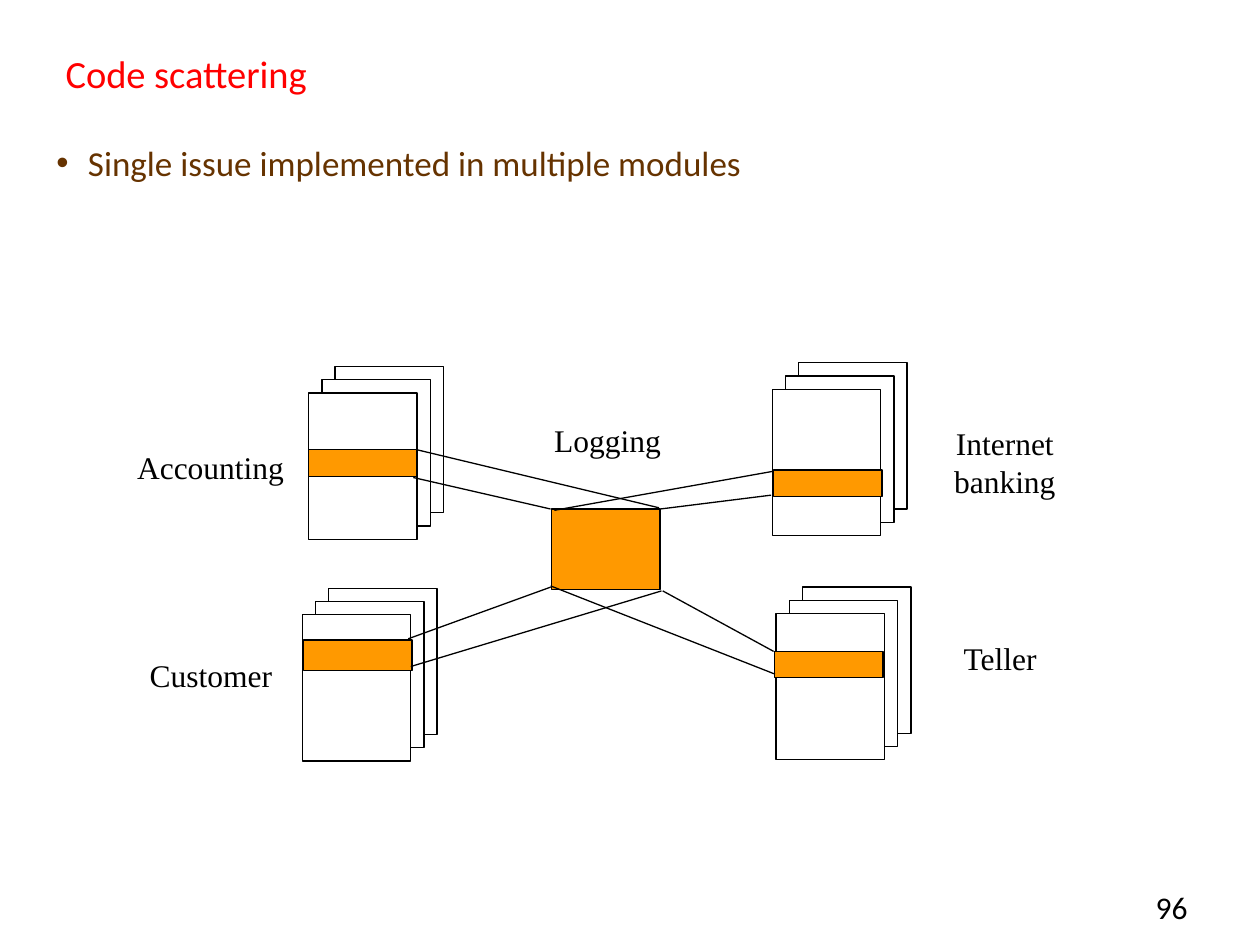
from lxml import etree
from pptx import Presentation
from pptx.dml.color import RGBColor
from pptx.enum.shapes import MSO_CONNECTOR, MSO_SHAPE
from pptx.enum.text import MSO_ANCHOR, MSO_AUTO_SIZE, PP_ALIGN
from pptx.oxml.ns import qn
from pptx.util import Inches, Pt

RECT = MSO_SHAPE.RECTANGLE
STRAIGHT = MSO_CONNECTOR.STRAIGHT
MIDDLE = MSO_ANCHOR.MIDDLE
GROW, NO_FIT = MSO_AUTO_SIZE.SHAPE_TO_FIT_TEXT, MSO_AUTO_SIZE.NONE
LEFT, CENTER, RIGHT = PP_ALIGN.LEFT, PP_ALIGN.CENTER, PP_ALIGN.RIGHT

BLACK = RGBColor(0x00, 0x00, 0x00)
WHITE = RGBColor(0xFF, 0xFF, 0xFF)
RED = RGBColor(0xFF, 0x00, 0x00)
BROWN = RGBColor(0x66, 0x33, 0x00)
ORANGE = RGBColor(0xFF, 0x99, 0x00)

prs = Presentation()
prs.slide_width, prs.slide_height = Inches(10), Inches(7.5)
s = prs.slides.add_slide(prs.slide_layouts[5])


def write(sp, box, lines, size, font, color, align=LEFT):
    """Place a text shape and fill it, one paragraph per line."""
    sp.left, sp.top, sp.width, sp.height = [Inches(v) for v in box]
    tf = sp.text_frame
    tf.word_wrap = True
    tf.auto_size = NO_FIT
    for i, line in enumerate(lines):
        p = tf.add_paragraph() if i else tf.paragraphs[0]
        p.alignment = align
        r = p.add_run()
        r.text = line
        r.font.size = Pt(size)
        r.font.name = font
        r.font.color.rgb = color
    return tf


def add_box(x, y, w, h, fill):
    sp = s.shapes.add_shape(RECT, Inches(x), Inches(y), Inches(w), Inches(h))
    sp.shadow.inherit = False
    sp.fill.solid()
    sp.fill.fore_color.rgb = fill
    sp.line.color.rgb = BLACK
    sp.line.width = Pt(0.75)


# Title
tf = write(s.shapes.title, (0.42, 0.33, 9.08, 0.5), ["Code scattering"], 22, "Calibri", RED)
tf.vertical_anchor = MIDDLE

# Page number
page = s.shapes.add_textbox(0, 0, 0, 0)
write(page, (8.83, 7, 0.75, 0.5), ["96 "], 18, "Calibri", BLACK, RIGHT)

# Bullet
body = s.shapes.add_textbox(0, 0, 0, 0)
tf = write(body, (0.35, 1.07, 9.17, 5.67),
           ["Single issue implemented in multiple modules"], 20, "Calibri", BROWN)
pPr = tf.paragraphs[0]._p.get_or_add_pPr()
pPr.set("marL", str(Inches(0.25)))
pPr.set("indent", str(-Inches(0.25)))
etree.SubElement(pPr, qn("a:buFont")).set("typeface", "Arial")
etree.SubElement(pPr, qn("a:buChar")).set("char", "•")

# Modules: three stacked pages with an orange logging band on the front one
PAGE_W, PAGE_H, STEP = 0.86, 1.16, 0.105
modules = [  # front page x, y, band x, y, height
    (2.45, 3.12, 2.45, 3.57, 0.21),
    (6.13, 3.09, 6.14, 3.73, 0.21),
    (6.16, 4.87, 6.15, 5.17, 0.21),
    (2.40, 4.88, 2.41, 5.08, 0.24),
]
for x, y, band_x, band_y, band_h in modules:
    for depth in (2, 1, 0):
        add_box(x + depth * STEP, y - depth * STEP, PAGE_W, PAGE_H, WHITE)
    add_box(band_x, band_y, PAGE_W, band_h, ORANGE)

# Central logging block
add_box(4.38, 4.04, PAGE_W, 0.64, ORANGE)

# Lines from the logging block to the bands
links = [
    (4.37, 4.66, 3.24, 5.07), (5.25, 4.69, 3.26, 5.29),
    (4.37, 4.65, 6.15, 5.35), (5.26, 4.69, 6.14, 5.17),
    (5.23, 4.03, 3.31, 3.57), (4.37, 4.04, 3.28, 3.79),
    (4.40, 4.05, 6.14, 3.74), (5.24, 4.04, 6.12, 3.93),
]
for ends in links:
    line = s.shapes.add_connector(STRAIGHT, *[Inches(v) for v in ends])
    line.line.color.rgb = BLACK
    line.line.width = Pt(0.75)
    etree.SubElement(line._element.spPr, qn("a:effectLst"))

# Labels
labels = [
    ((4.30, 3.29, 1.05, 0.4), ["Logging"], LEFT),
    ((0.99, 3.51, 1.37, 0.4), ["Accounting"], LEFT),
    ((7.47, 3.32, 1.01, 0.7), ["Internet", "banking"], CENTER),
    ((1.09, 5.16, 1.17, 0.4), ["Customer"], LEFT),
    ((7.55, 5.02, 0.80, 0.4), ["Teller"], LEFT),
]
for box, lines, align in labels:
    label = s.shapes.add_textbox(0, 0, 0, 0)
    tf = write(label, box, lines, 18, "Times New Roman", BLACK, align)
    tf.word_wrap = False
    tf.auto_size = GROW

prs.save("out.pptx")
